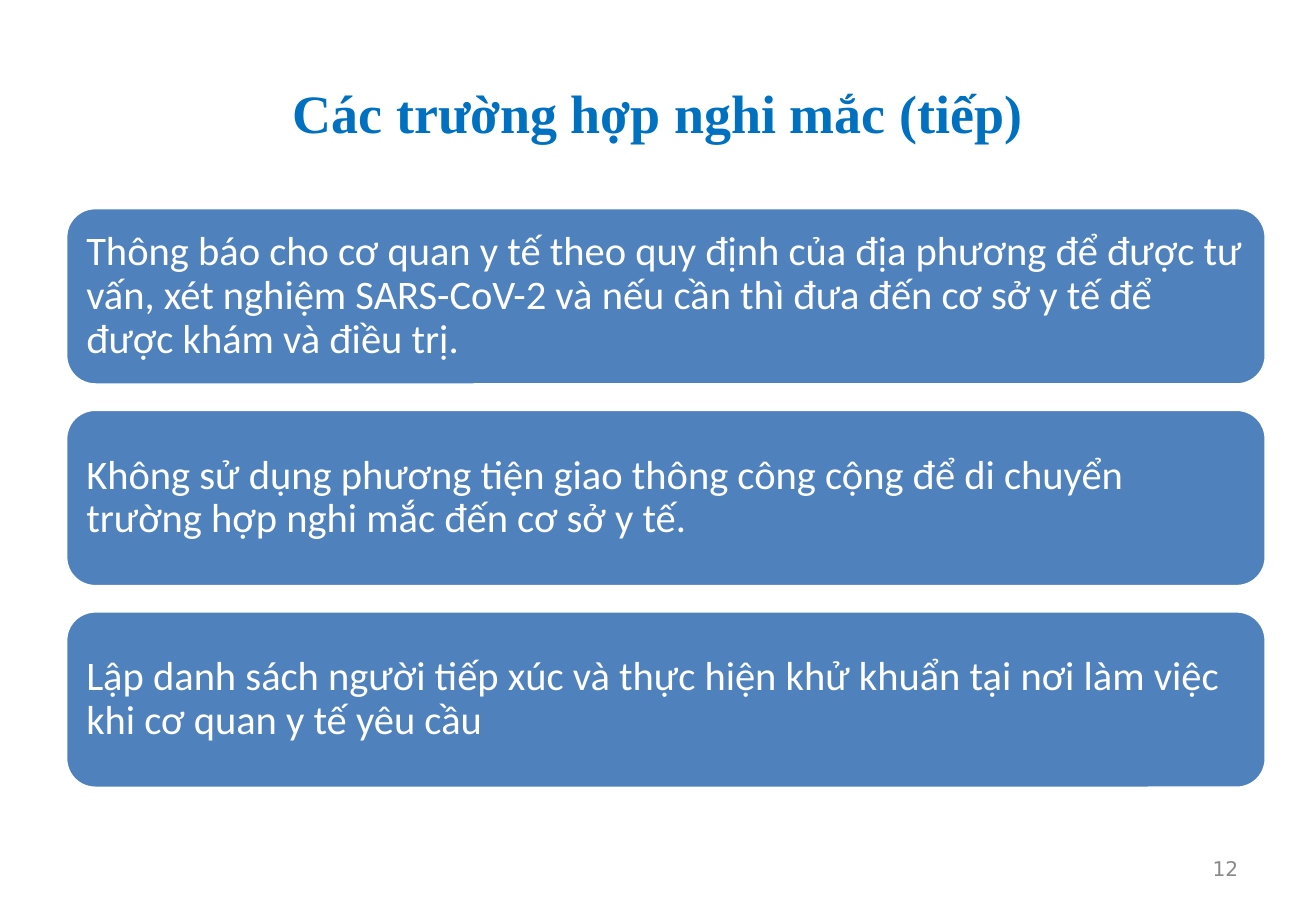
from dataclasses import dataclass

from pptx import Presentation
from pptx.dml.color import RGBColor
from pptx.enum.shapes import MSO_SHAPE
from pptx.enum.text import MSO_ANCHOR as Anchor, PP_ALIGN as Align
from pptx.util import Inches, Pt

TITLE = "Các trường hợp nghi mắc (tiếp)"
STEPS = [
    "Thông báo cho cơ quan y tế theo quy định của địa phương để được tư vấn, "
    "xét nghiệm SARS-CoV-2 và nếu cần thì đưa đến cơ sở y tế để được khám và điều trị.",
    "Không sử dụng phương tiện giao thông công cộng để di chuyển "
    "trường hợp nghi mắc đến cơ sở y tế.",
    "Lập danh sách người tiếp xúc và thực hiện khử khuẩn tại nơi làm việc "
    "khi cơ quan y tế yêu cầu",
]
PAGE_NUMBER = "12"


@dataclass(frozen=True)
class TextStyle:
    font: str
    size: int
    color: str
    align: Align
    bold: bool = False


@dataclass(frozen=True)
class Theme:
    title = TextStyle("Times New Roman", 32, "0070C0", Align.CENTER, True)
    step = TextStyle("Calibri", 24, "FFFFFF", Align.LEFT)
    number = TextStyle("DejaVu Sans", 12, "898989", Align.RIGHT)
    step_fill = "4F81BD"
    step_line = "FFFFFF"


THEME = Theme()
LEFT = 0.54
STEP_TOP, STEP_WIDTH, STEP_HEIGHT, STEP_GAP = 1.71, 9.88, 1.46, 0.2


def write(box, text, style):
    frame = box.text_frame
    frame.word_wrap = True
    frame.vertical_anchor = Anchor.MIDDLE
    para = frame.paragraphs[0]
    para.alignment = style.align
    span = para.add_run()
    span.text = text
    span.font.name = style.font
    span.font.size = Pt(style.size)
    span.font.bold = style.bold
    span.font.color.rgb = RGBColor.from_string(style.color)
    return frame


def add_title(page):
    box = page.shapes.title
    box.left, box.top = Inches(LEFT), Inches(0.3)
    box.width, box.height = Inches(9.75), Inches(1.25)
    write(box, TITLE, THEME.title)


def add_step(page, index, text):
    top = STEP_TOP + index * (STEP_HEIGHT + STEP_GAP)
    box = page.shapes.add_shape(
        MSO_SHAPE.ROUNDED_RECTANGLE,
        Inches(LEFT), Inches(top), Inches(STEP_WIDTH), Inches(STEP_HEIGHT),
    )
    box.shadow.inherit = False
    box.fill.solid()
    box.fill.fore_color.rgb = RGBColor.from_string(THEME.step_fill)
    box.line.color.rgb = RGBColor.from_string(THEME.step_line)
    box.line.width = Pt(2)
    frame = write(box, text, THEME.step)
    frame.margin_left = frame.margin_right = Inches(0.1)
    frame.margin_top = frame.margin_bottom = Inches(0.1)
    frame.paragraphs[0].line_spacing = 0.9


def add_page_number(page):
    box = page.shapes.add_textbox(Inches(7.76), Inches(6.95), Inches(2.53), Inches(0.4))
    write(box, PAGE_NUMBER, THEME.number)


def main():
    deck = Presentation()
    deck.slide_width, deck.slide_height = Inches(10.83), Inches(7.5)
    page = deck.slides.add_slide(deck.slide_layouts.get_by_name("Title Only"))
    add_title(page)
    for index, text in enumerate(STEPS):
        add_step(page, index, text)
    add_page_number(page)
    deck.save("out.pptx")


if __name__ == "__main__":
    main()
